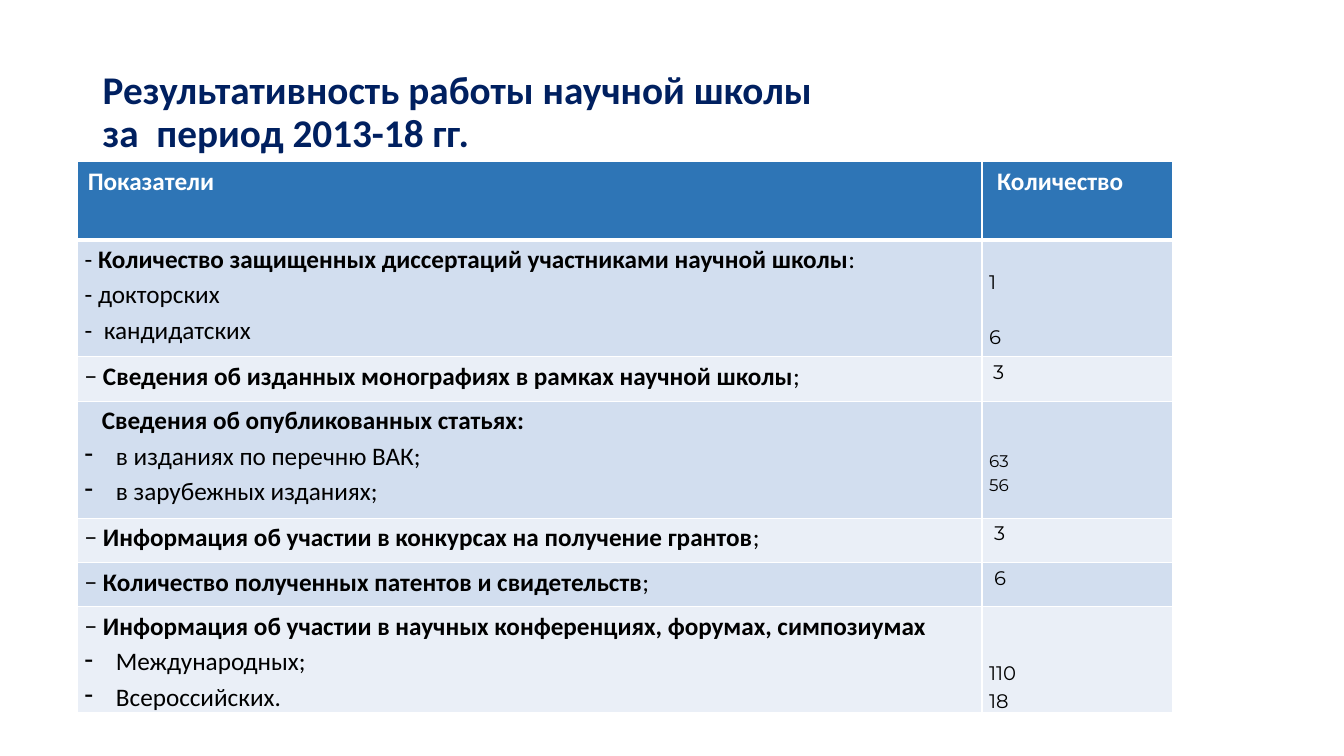
from dataclasses import dataclass

from lxml.etree import SubElement
from pptx import Presentation
from pptx.dml.color import RGBColor
from pptx.enum.text import MSO_ANCHOR
from pptx.oxml.ns import qn
from pptx.util import Emu, Inches, Pt


@dataclass(frozen=True)
class Theme:
    navy: str = "002060"
    header: str = "2E75B6"
    bands: tuple[str, str] = ("D2DEEF", "EAEFF7")
    white: str = "FFFFFF"
    black: str = "000000"
    text_font: str = "Calibri"
    number_font: str = "Montserrat"
    title_size: int = 28
    body_size: int = 18
    number_size: int = 14
    small_size: int = 12


@dataclass(frozen=True)
class Line:
    """A paragraph: plain lead, bold core, plain tail."""
    lead: str = ""
    core: str = ""
    tail: str = ""
    bullet: bool = False
    indent: float = 0
    before: float = 0


@dataclass(frozen=True)
class Row:
    height: float  # percent of the slide height
    labels: tuple[Line, ...]
    counts: tuple[Line, ...]
    count_top: float = 0
    count_left: float = 0.07
    count_size: int = Theme.number_size


THEME = Theme()
TALL, SHORT, LAST = 15.47, 5.87, 14.0
ROWS = (
    Row(TALL,
        (Line("- ", "Количество защищенных диссертаций участниками научной школы", ":"),
         Line("- докторских"), Line("-  кандидатских")),
        (Line("1"), Line("6", before=19.6)), count_top=0.27),
    Row(SHORT, (Line("− ", "Сведения об изданных монографиях в рамках научной школы", ";"),),
        (Line("3"),), count_left=0.11),
    Row(TALL,
        (Line(core="Сведения об опубликованных статьях:", indent=0.17),
         Line("в изданиях по перечню ВАК;", bullet=True),
         Line("в зарубежных изданиях;", bullet=True)),
        (Line("63"), Line("56")), count_top=0.47, count_size=THEME.small_size),
    Row(SHORT, (Line("− ", "Информация об участии в конкурсах на получение грантов", ";"),),
        (Line("3"),), count_left=0.12),
    Row(SHORT, (Line("− ", "Количество полученных патентов и свидетельств", ";"),),
        (Line("6"),), count_left=0.12),
    Row(LAST,
        (Line("− ", "Информация об участии в научных конференциях, форумах, симпозиумах"),
         Line("Международных;", bullet=True), Line("Всероссийских.", bullet=True)),
        (Line("110"), Line("18")), count_top=0.51),
)

prs = Presentation()
prs.slide_width, prs.slide_height = Inches(13.33), Inches(7.5)


def across(percent: float) -> Emu:
    return Emu(int(prs.slide_width * percent / 100))


def down(percent: float) -> Emu:
    return Emu(int(prs.slide_height * percent / 100))


def style_run(r, font: str, size: int, color: str, bold: bool = False) -> None:
    r.font.name, r.font.size, r.font.bold = font, Pt(size), bold
    r.font.color.rgb = RGBColor.from_string(color)


def set_indent(p, left: float, hanging: bool) -> None:
    pPr = p._p.get_or_add_pPr()
    pPr.set("marL", str(Inches(left)))
    pPr.set("indent", str(-Inches(left) if hanging else 0))
    if hanging:
        SubElement(pPr, qn("a:buChar"), char="-")


def write_lines(cell, lines: tuple[Line, ...], font: str, size: int) -> None:
    tf = cell.text_frame
    for i, line in enumerate(lines):
        p = tf.paragraphs[0] if i == 0 else tf.add_paragraph()
        p.line_spacing = 1.15
        if line.before:
            p.space_before = Pt(line.before)
        if line.bullet or line.indent:
            set_indent(p, line.indent or 0.31, line.bullet)
        for text, bold in ((line.lead, False), (line.core, True), (line.tail, False)):
            if text:
                r = p.add_run()
                r.text = text
                style_run(r, font, size, THEME.black, bold)


def dress_cell(cell, fill: str, margins: tuple[float, float, float, float],
               bottom: float = 1, top: float = 1) -> None:
    cell.margin_left, cell.margin_top, cell.margin_right, cell.margin_bottom = map(Inches, margins)
    tcPr = cell._tc.get_or_add_tcPr()
    for side, width in (("L", 1), ("R", 1), ("T", top), ("B", bottom)):
        ln = SubElement(tcPr, qn(f"a:ln{side}"), w=str(Pt(width)))
        SubElement(SubElement(ln, qn("a:solidFill")), qn("a:srgbClr"), val=THEME.white)
    cell.fill.solid()
    cell.fill.fore_color.rgb = RGBColor.from_string(fill)


def add_title(s) -> None:
    tf = s.shapes.add_textbox(across(6.9), down(5.33), across(86.27), down(19.33)).text_frame
    tf.word_wrap = True
    tf.vertical_anchor = MSO_ANCHOR.MIDDLE
    tf.text = "Результативность работы научной школы\vза  период 2013-18 гг."
    p = tf.paragraphs[0]
    p.line_spacing = 0.9
    for r in p.runs:
        style_run(r, THEME.text_font, THEME.title_size, THEME.navy, True)


def add_results(s) -> None:
    columns, heights = (67.29, 14.18), (10.4, *(row.height for row in ROWS))
    table = s.shapes.add_table(len(heights), len(columns), across(5.78), down(21.33),
                               across(sum(columns)), down(sum(heights))).table
    table.first_row = table.horz_banding = False
    for column, width in zip(table.columns, columns):
        column.width = across(width)
    for table_row, height in zip(table.rows, heights):
        table_row.height = down(height)

    # Header
    for i, (text, left) in enumerate((("Показатели", 0.1), ("Количество", 0.15))):
        cell = table.cell(0, i)
        dress_cell(cell, THEME.header, (left, 0.05, 0.1, 0.05), bottom=3)
        cell.text_frame.text = text
        style_run(cell.text_frame.paragraphs[0].runs[0],
                  THEME.text_font, THEME.body_size, THEME.white, True)

    # Indicators and counts
    for i, row in enumerate(ROWS, 1):
        label, count = table.cell(i, 0), table.cell(i, 1)
        fill, top = THEME.bands[(i - 1) % 2], 3 if i == 1 else 1
        dress_cell(label, fill, (0.07, 0, 0.07, 0), top=top)
        dress_cell(count, fill, (row.count_left, row.count_top, 0.07, 0), top=top)
        write_lines(label, row.labels, THEME.text_font, THEME.body_size)
        write_lines(count, row.counts, THEME.number_font, row.count_size)


def main() -> None:
    s = prs.slides.add_slide(prs.slide_layouts[6])
    add_title(s)
    add_results(s)
    prs.save("out.pptx")


if __name__ == "__main__":
    main()
